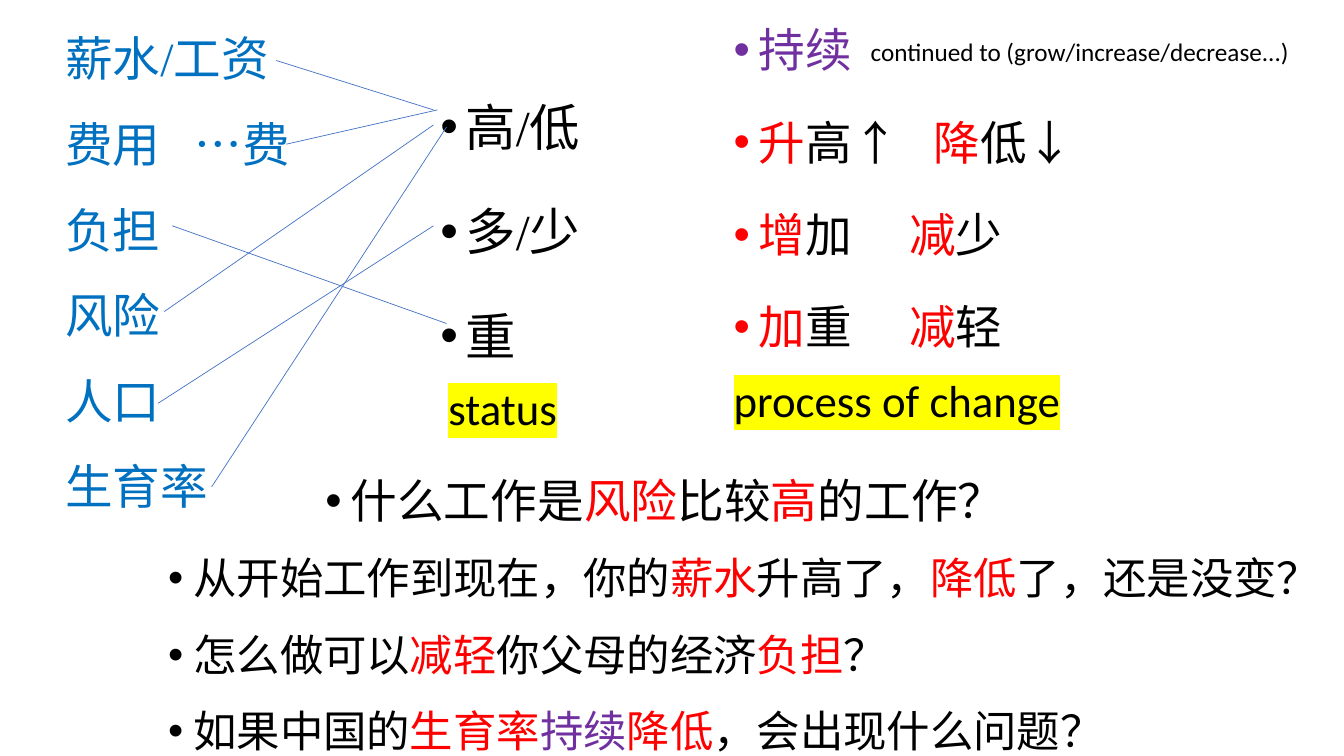
"""Build a Chinese vocabulary slide linking nouns to status and change words."""
import pptx
import pptx.dml.color
import pptx.enum.shapes
import pptx.enum.text
import pptx.oxml.ns
import pptx.util
from lxml import etree

Pt = pptx.util.Pt
BLACK, RED, BLUE, PURPLE = "000000", "FF0000", "0070C0", "7030A0"
YELLOW, LINK_BLUE = "FFFF00", "4472C4"


def rgb(value):
    return pptx.dml.color.RGBColor.from_string(value)


def add_xml(parent, tag, **attributes):
    return etree.SubElement(parent, pptx.oxml.ns.qn(tag), attributes)


def add_run(paragraph, text, size, font="Times New Roman", colour=BLACK,
            highlight=None, gap=0):
    run = paragraph.add_run()
    run.text = text
    run.font.size = Pt(size)
    run.font.color.rgb = rgb(colour)
    properties = run.font._element
    if highlight:
        marker = add_xml(properties, "a:highlight")
        add_xml(marker, "a:srgbClr", val=highlight)
    if gap:
        properties.set("spc", str(gap * 100))
    run.font.name = font


class VocabularySlide:
    def __init__(self, slide, indent=18, before=10):
        self.slide = slide
        self.indent = indent
        self.before = before

    def frame(self, left, top, width, height, wrap=True):
        box = self.slide.shapes.add_textbox(Pt(left), Pt(top), Pt(width), Pt(height))
        box.text_frame.word_wrap = wrap
        return box.text_frame

    def paragraphs(self, frame, lines, size, spacing, bullet=True):
        for index, parts in enumerate(lines):
            paragraph = frame.add_paragraph() if index else frame.paragraphs[0]
            paragraph.line_spacing = spacing
            if bullet:
                self.bullet(paragraph)
            for text, style in parts:
                add_run(paragraph, text, size, **style)

    def bullet(self, paragraph):
        paragraph.space_before = Pt(self.before)
        properties = paragraph._p.get_or_add_pPr()
        properties.set("marL", str(Pt(self.indent)))
        properties.set("indent", str(-Pt(self.indent)))
        add_xml(properties, "a:buFont", typeface="Arial")
        add_xml(properties, "a:buChar", char="•")

    def label(self, text, left, top, width, height, size, highlight=None):
        frame = self.frame(left, top, width, height, wrap=False)
        frame.auto_size = pptx.enum.text.MSO_AUTO_SIZE.SHAPE_TO_FIT_TEXT
        add_run(frame.paragraphs[0], text, size, font="Calibri", highlight=highlight)

    def link(self, *ends):
        straight = pptx.enum.shapes.MSO_CONNECTOR.STRAIGHT
        line = self.slide.shapes.add_connector(straight, *map(Pt, ends))
        line.line.color.rgb = rgb(LINK_BLUE)
        line.line.width = Pt(0.5)
        add_xml(line._element.spPr, "a:effectLst")


def main():
    deck = pptx.Presentation()
    deck.slide_width, deck.slide_height = Pt(960), Pt(540)
    page = VocabularySlide(deck.slides.add_slide(deck.slide_layouts[6]))

    black, red, blue, purple = ({"colour": c} for c in (BLACK, RED, BLUE, PURPLE))
    narrow_gap, wide_gap = (" ", {"gap": 17}), (" ", {"gap": 33})

    nouns = page.frame(39.6, 43.2, 270, 281.5)
    nouns.vertical_anchor = pptx.enum.text.MSO_ANCHOR.MIDDLE
    page.paragraphs(nouns, [
        [("薪水/工资", blue)],
        [("费用", blue), narrow_gap, ("…费", blue)],
        *([(noun, blue)] for noun in ("负担", "风险", "人口", "生育率")),
    ], 34, 1.5, bullet=False)

    status_words = page.frame(307.4, 43.2, 291.6, 224.6)
    page.paragraphs(status_words, [[(word, black)] for word in ("高/低", "多/少", "重")],
                    36, 1.5)

    change_words = page.frame(517, -4.3, 291.6, 257)
    page.paragraphs(change_words, [
        [("持续", purple)],
        [("升", red), ("高↑", black), narrow_gap, ("降", red), ("低↓", black)],
        [("增", red), ("加", black), wide_gap, ("减", red), ("少", black)],
        [("加", red), ("重", black), wide_gap, ("减", red), ("轻", black)],
    ], 33.3, 1.4)

    for ends in (
        (197.3, 43.2, 309.6, 78.5),
        (204.5, 103, 312.5, 78.5),
        (123.1, 161.3, 319, 231.1),
        (117.4, 222.5, 309.6, 89.3),
        (113, 288, 309.6, 161.3),
        (151.2, 347.8, 319, 90.7),
    ):
        page.link(*ends)

    page.label("status", 313.2, 268.6, 92.9, 46.1, 32, highlight=YELLOW)
    page.label("process of change", 517, 262.8, 249.8, 46.1, 32, highlight=YELLOW)
    page.label("continued to (grow/increase/decrease...)", 614.9, 22.3, 316.8, 28.8, 18)

    risk_question = page.frame(225.4, 329.8, 633.6, 51.1)
    page.paragraphs(risk_question, [
        [("什么工作是", black), ("风险", red), ("比较", black), ("高", red),
         ("的工作？", black)],
    ], 33.3, 1.1)

    discussion = page.frame(113, 383, 828, 160.6)
    page.paragraphs(discussion, [
        [("从开始工作到现在，你的", black), ("薪水", red), ("升高了，", black),
         ("降低", red), ("了，还是没变？", black)],
        [("怎么做可以", black), ("减轻", red), ("你父母的经济", black),
         ("负担", red), ("？", black)],
        [("如果中国的", black), ("生育率", red), ("持续", purple), ("降低", red),
         ("，会出现什么问题？", black)],
    ], 31, 1.2)

    deck.save("out.pptx")


if __name__ == "__main__":
    main()
